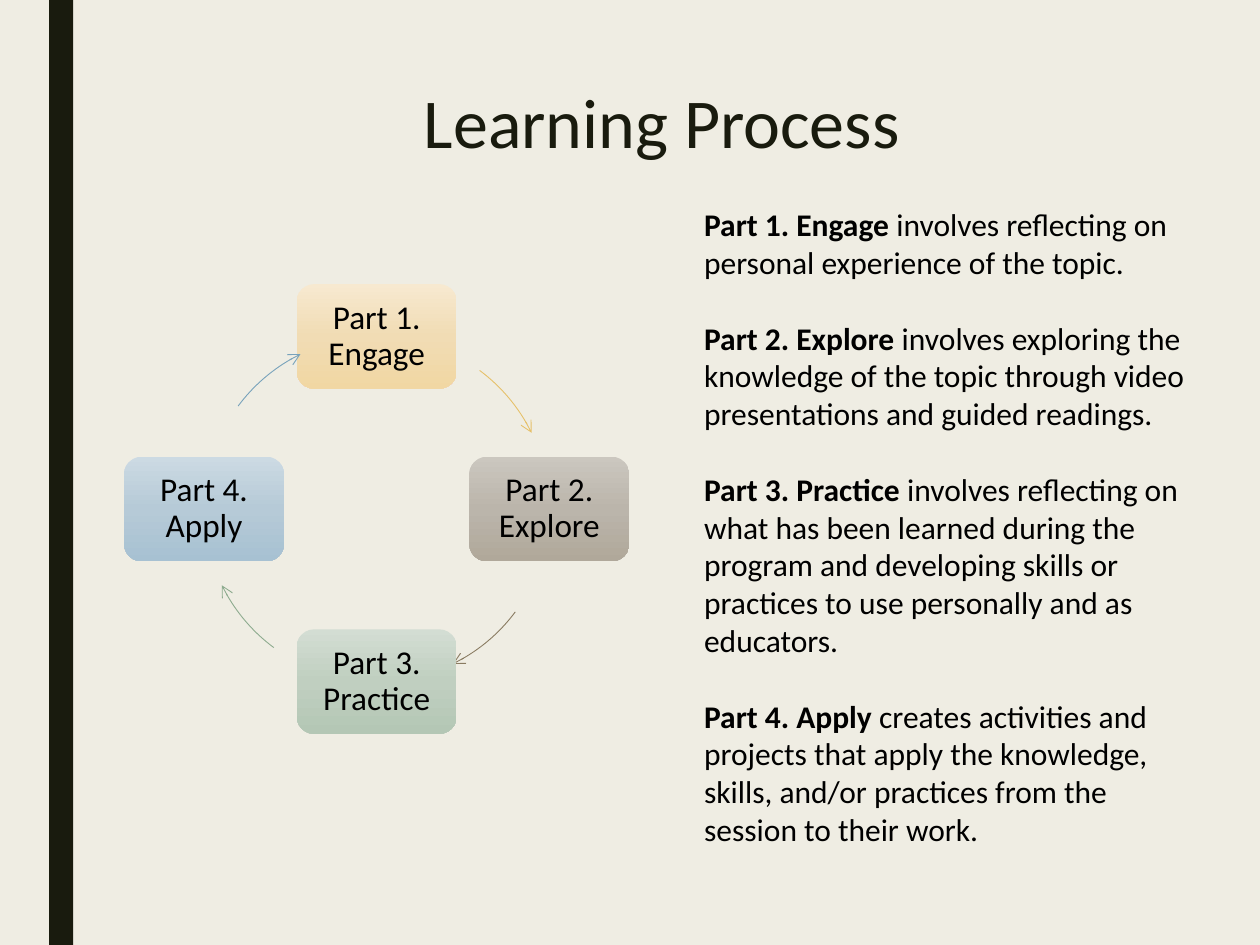
from copy import deepcopy
from math import cos, radians, sin

from lxml import etree
from pptx import Presentation
from pptx.dml.color import RGBColor
from pptx.enum.shapes import MSO_SHAPE
from pptx.enum.text import MSO_ANCHOR, PP_ALIGN
from pptx.oxml.ns import qn
from pptx.util import Inches, Pt

CENTER, LEFT = PP_ALIGN.CENTER, PP_ALIGN.LEFT
MIDDLE, TOP = MSO_ANCHOR.MIDDLE, MSO_ANCHOR.TOP
RECTANGLE, ROUNDED, ARC = MSO_SHAPE.RECTANGLE, MSO_SHAPE.ROUNDED_RECTANGLE, MSO_SHAPE.ARC

COLORS = {"background": "EFEDE3", "dark": "191B0E", "text": "000000"}
STAGES = [
    ("Part 1. Engage", " involves reflecting on personal experience of the topic.",
     ("F7E9D0", "F1DCB4", "F1D7A3"), "E6C069"),
    ("Part 2. Explore", " involves exploring the knowledge of the topic through video "
     "presentations and guided readings.",
     ("CBC7BF", "BBB5AB", "B0A89A"), "897B61"),
    ("Part 3. Practice", " involves reflecting on what has been learned during the program "
     "and developing skills or practices to use personally and as educators.",
     ("D3DDD3", "C0CFC0", "B4C7B5"), "8DAB8E"),
    ("Part 4. Apply", " creates activities and projects that apply the knowledge, skills, "
     "and/or practices from the session to their work.",
     ("CCDAE3", "B6CAD7", "A7C1D2"), "77A2BB"),
]


def write(para, text, size=18, color=COLORS["text"], bold=False, align=LEFT, spacing=None):
    para.alignment = align
    if spacing:
        para.line_spacing = spacing
    span = para.add_run()
    span.text = text
    span.font.name = "Calibri"
    span.font.size = Pt(size)
    span.font.bold = bold
    span.font.color.rgb = RGBColor.from_string(color)


deck = Presentation()
deck.slide_width, deck.slide_height = Inches(10), Inches(7.5)
page = deck.slides.add_slide(deck.slide_layouts[6])
page.background.fill.solid()
page.background.fill.fore_color.rgb = RGBColor.from_string(COLORS["background"])

band = page.shapes.add_shape(RECTANGLE, Inches(0.39), 0, Inches(0.19), Inches(7.5))
band.shadow.inherit = False
band.fill.solid()
band.fill.fore_color.rgb = RGBColor.from_string(COLORS["dark"])
band.line.fill.background()

title = page.shapes.add_textbox(Inches(0.63), Inches(0.48), Inches(9.37), Inches(1.04))
title.text_frame.word_wrap = True
title.text_frame.vertical_anchor = MIDDLE
write(title.text_frame.paragraphs[0], "Learning Process ", size=40,
      color=COLORS["dark"], align=CENTER, spacing=0.89)

center_x, center_y, radius = 2.99, 4.04, 1.37
node_width, node_height = 1.27, 0.83
arc_start, arc_end = 36.6, 63.8

for index, (name, _, shades, line_color) in enumerate(STAGES):
    angle = index * 90 - 90
    node = page.shapes.add_shape(
        ROUNDED,
        Inches(center_x + radius * cos(radians(angle)) - node_width / 2),
        Inches(center_y + radius * sin(radians(angle)) - node_height / 2),
        Inches(node_width), Inches(node_height))
    node.shadow.inherit = False
    node.line.fill.background()
    node.fill.gradient()
    node.fill.gradient_angle = 270
    first_stop = next(node._element.spPr.iter(qn("a:gs")))
    first_stop.addnext(deepcopy(first_stop))
    for stop, position, shade in zip(node.fill.gradient_stops, (0, 0.5, 1), shades):
        stop.position = position
        stop.color.rgb = RGBColor.from_string(shade)
    frame = node.text_frame
    frame.word_wrap = True
    frame.vertical_anchor = MIDDLE
    frame.margin_left = frame.margin_right = Inches(0.08)
    frame.margin_top = frame.margin_bottom = Inches(0.08)
    write(frame.paragraphs[0], name, size=19, align=CENTER, spacing=0.9)

    arc = page.shapes.add_shape(
        ARC, Inches(center_x - radius), Inches(center_y - radius),
        Inches(2 * radius), Inches(2 * radius))
    arc.shadow.inherit = False
    arc.fill.background()
    for place, offset in enumerate((arc_start, arc_end)):
        arc.adjustments[place] = (angle + offset) % 360 * 0.6
    arc.line.color.rgb = RGBColor.from_string(line_color)
    arc.line.width = Pt(0.5)
    etree.SubElement(arc.line._get_or_add_ln(), qn("a:tailEnd"), type="arrow")

details = page.shapes.add_textbox(Inches(5.49), Inches(1.58), Inches(4.17), Inches(5.76))
details.text_frame.word_wrap = True
details.text_frame.vertical_anchor = TOP
for index, (name, description, _, _) in enumerate(STAGES):
    para = details.text_frame.add_paragraph() if index else details.text_frame.paragraphs[0]
    if index:
        para.space_before = Pt(21.6)
    write(para, name, bold=True)
    write(para, description)

deck.save("out.pptx")
